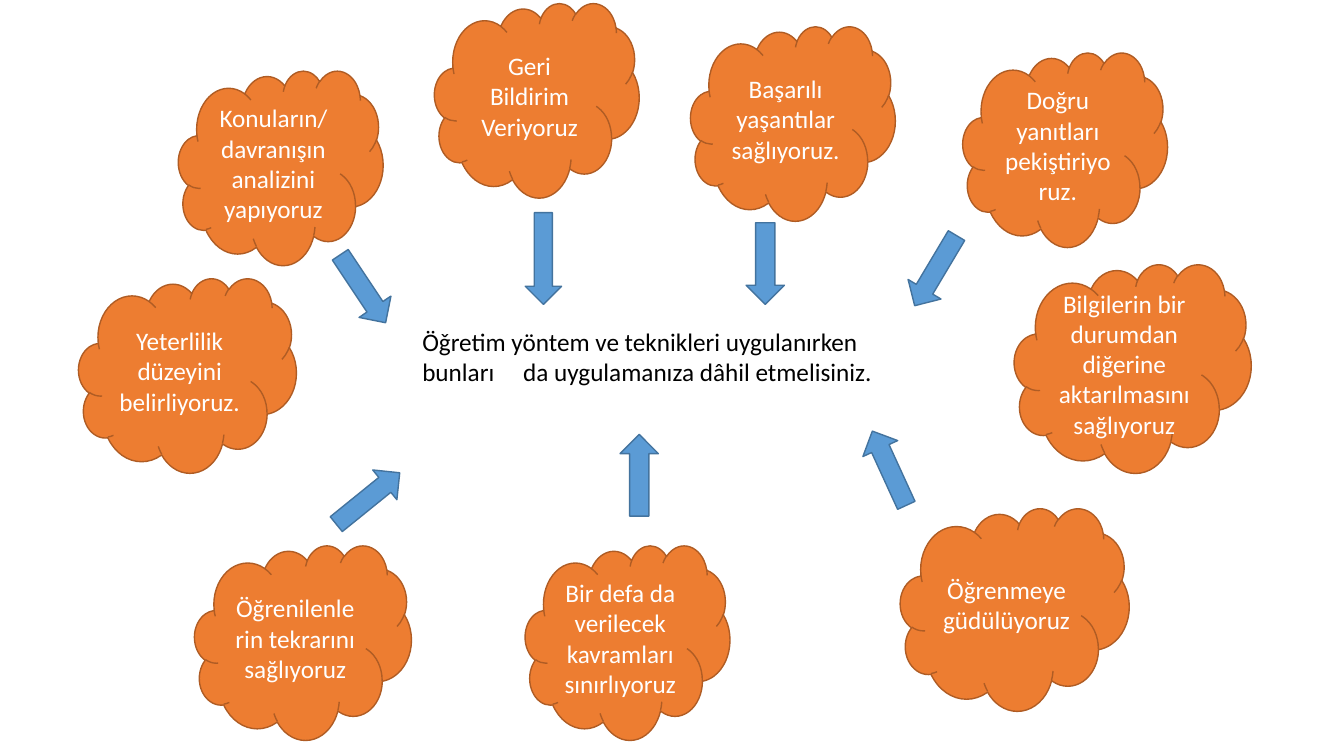
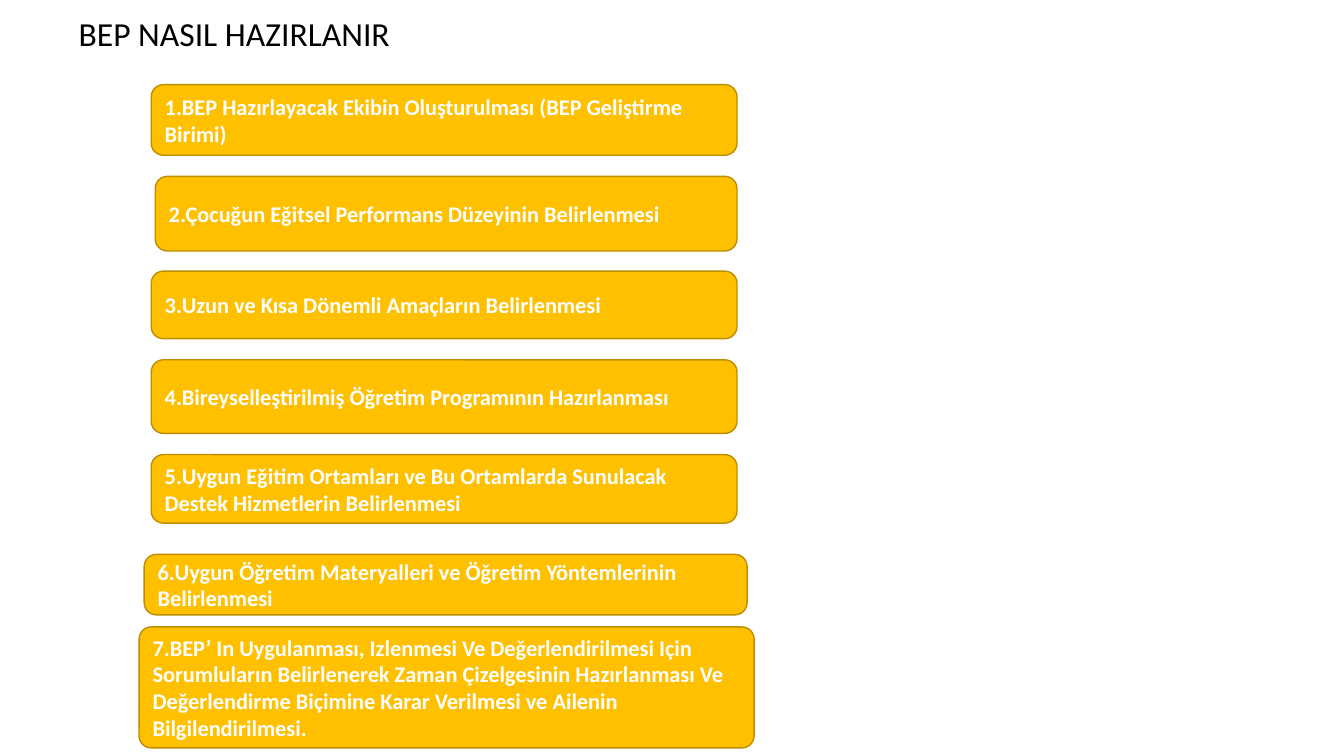
from lxml import etree
from pptx import Presentation
from pptx.dml.color import RGBColor
from pptx.enum.shapes import MSO_SHAPE as Preset
from pptx.enum.text import MSO_ANCHOR as Anchor, PP_ALIGN as Align
from pptx.oxml.ns import qn
from pptx.util import Inches, Pt

FONT = "Calibri"
COLORS = {
    "text": "000000",
    "white": "FFFFFF",
    "cloud": "ED7D31",
    "cloud_line": "AF5C24",
    "arrow": "5B9BD5",
    "arrow_line": "43739E",
    "step": "FFC000",
    "step_line": "BD8E00",
}
CLOUD_TEXT = {"size": Pt(18), "color": "white", "align": Align.CENTER}
STEP_TEXT = {"size": Pt(16), "color": "white", "bold": True, "align": Align.LEFT}
MESSAGE_TEXT = {"size": Pt(18), "color": "text", "align": Align.LEFT}
TITLE_TEXT = {"size": Pt(24), "color": "text", "align": Align.LEFT}
STEP_CORNER = 0.12

# text, (left, top, width, height)
CLOUDS = [
    ("Geri Bildirim Veriyoruz", (4.31, 0.03, 2.03, 1.93)),
    ("Bilgilerin bir durumdan diğerine aktarılmasını sağlıyoruz",
     (10.06, 2.62, 2.35, 2.07)),
    ("Doğru yanıtları pekiştiriyoruz.", (9.55, 0.52, 2.03, 1.93)),
    ("Yeterlilik düzeyini belirliyoruz.", (0.78, 2.76, 2.16, 1.93)),
    ("Başarılı yaşantılar sağlıyoruz.", (6.85, 0.26, 2.03, 1.93)),
    ("Konuların/davranışın analizini yapıyoruz", (1.77, 0.7, 2.03, 1.93)),
    ("Bir defa da verilecek kavramları sınırlıyoruz", (5.21, 5.41, 2.03, 1.93)),
    ("Öğrenilenlerin tekrarını sağlıyoruz", (1.93, 5.41, 2.15, 1.93)),
    ("Öğrenmeye güdülüyoruz", (8.93, 5.04, 2.27, 2.01)),
]
# rotation, (left, top, width, height)
ARROWS = [
    (0, (5.21, 2.11, 0.36, 0.91)),
    (0, (7.4, 2.21, 0.38, 0.81)),
    (30.8, (9.09, 2.28, 0.38, 0.81)),
    (326.3, (3.41, 2.46, 0.38, 0.81)),
    (180, (6.15, 4.31, 0.38, 0.81)),
    (231, (3.46, 4.54, 0.38, 0.81)),
    (155.4, (8.63, 4.24, 0.38, 0.81)),
]
MESSAGE = ("Öǧretim yöntem ve teknikleri uygulanırken bunları\t"
           "da uygulamanıza dâhil etmelisiniz.")
STEPS = [
    ("1.BEP Hazırlayacak Ekibin Oluşturulması (BEP Geliştirme Birimi)",
     (1.5, 0.84, 5.81, 0.7)),
    ("2.Çocuǧun Eǧitsel Performans Düzeyinin Belirlenmesi",
     (1.54, 1.75, 5.77, 0.74)),
    ("3.Uzun ve Kısa Dönemli Amaçların Belirlenmesi", (1.5, 2.69, 5.81, 0.67)),
    ("4.Bireyselleştirilmiş Öǧretim Programının Hazırlanması",
     (1.5, 3.57, 5.81, 0.73)),
    ("5.Uygun Eǧitim Ortamları ve Bu Ortamlarda Sunulacak Destek Hizmetlerin "
     "Belirlenmesi", (1.5, 4.51, 5.81, 0.68)),
    ("6.Uygun Öǧretim Materyalleri ve Öǧretim Yöntemlerinin Belirlenmesi",
     (1.43, 5.5, 5.98, 0.6)),
    ("7.BEP’ In Uygulanması, Izlenmesi Ve Deǧerlendirilmesi Için Sorumluların "
     "Belirlenerek Zaman Çizelgesinin Hazırlanması Ve Deǧerlendirme Biçimine "
     "Karar Verilmesi ve Ailenin Bilgilendirilmesi.", (1.38, 6.22, 6.1, 1.2)),
]


def rgb(color):
    return RGBColor.from_string(COLORS[color])


def inches(box):
    return [Inches(length) for length in box]


def write(frame, text, style, anchor=Anchor.MIDDLE):
    """Fill a text frame with one styled paragraph and return the paragraph."""
    frame.word_wrap = True
    frame.vertical_anchor = anchor
    paragraph = frame.paragraphs[0]
    paragraph.alignment = style["align"]
    run = paragraph.add_run()
    run.text = text
    font_format = {"name": FONT, "size": style["size"], "bold": style.get("bold", False)}
    for attribute, value in font_format.items():
        setattr(run.font, attribute, value)
    run.font.color.rgb = rgb(style["color"])
    return paragraph


def add_outlined(slide, preset, box, color):
    shape = slide.shapes.add_shape(preset, *inches(box))
    shape.shadow.inherit = False
    shape.fill.solid()
    shape.fill.fore_color.rgb = rgb(color)
    shape.line.color.rgb = rgb(color + "_line")
    shape.line.width = Pt(1)
    return shape


def add_message(slide, box, indent, right_margin, tab):
    """Place the indented central sentence with one tab stop."""
    frame = slide.shapes.add_textbox(*inches(box)).text_frame
    frame.margin_right = Inches(right_margin)
    paragraph = write(frame, MESSAGE, MESSAGE_TEXT, Anchor.TOP)
    paragraph.space_before = Pt(5.1)
    properties = paragraph._p.get_or_add_pPr()
    properties.set("marL", str(Inches(indent)))
    properties.set("indent", "0")
    stops = etree.SubElement(properties, qn("a:tabLst"))
    etree.SubElement(stops, qn("a:tab"), pos=str(Inches(tab)), algn="l")


def add_step(slide, text, box):
    """Place a step with the same corner radius whatever its height."""
    step = add_outlined(slide, Preset.ROUNDED_RECTANGLE, box, "step")
    step.adjustments[0] = STEP_CORNER / box[3]
    step.text_frame.margin_top = step.text_frame.margin_bottom = 0
    write(step.text_frame, text, STEP_TEXT)


def build_cloud_slide(prs):
    slide = prs.slides.add_slide(prs.slide_layouts[6])
    for text, box in CLOUDS:
        cloud = add_outlined(slide, Preset.CLOUD, box, "cloud")
        write(cloud.text_frame, text, CLOUD_TEXT)
    add_message(slide, (3.61, 3.19, 5.98, 1.45), indent=0.48, right_margin=0.9, tab=1.7)
    for rotation, box in ARROWS:
        add_outlined(slide, Preset.DOWN_ARROW, box, "arrow").rotation = rotation


def build_steps_slide(prs):
    slide = prs.slides.add_slide(prs.slide_layouts[5])
    title = slide.shapes.title
    title.left, title.top, title.width, title.height = inches((0.68, 0.1, 9.12, 0.5))
    write(title.text_frame, "BEP NASIL HAZIRLANIR", TITLE_TEXT).line_spacing = 0.9
    for text, box in STEPS:
        add_step(slide, text, box)


def main():
    prs = Presentation()
    prs.slide_width, prs.slide_height = inches((13.33, 7.5))
    build_cloud_slide(prs)
    build_steps_slide(prs)
    prs.save("out.pptx")


if __name__ == "__main__":
    main()
